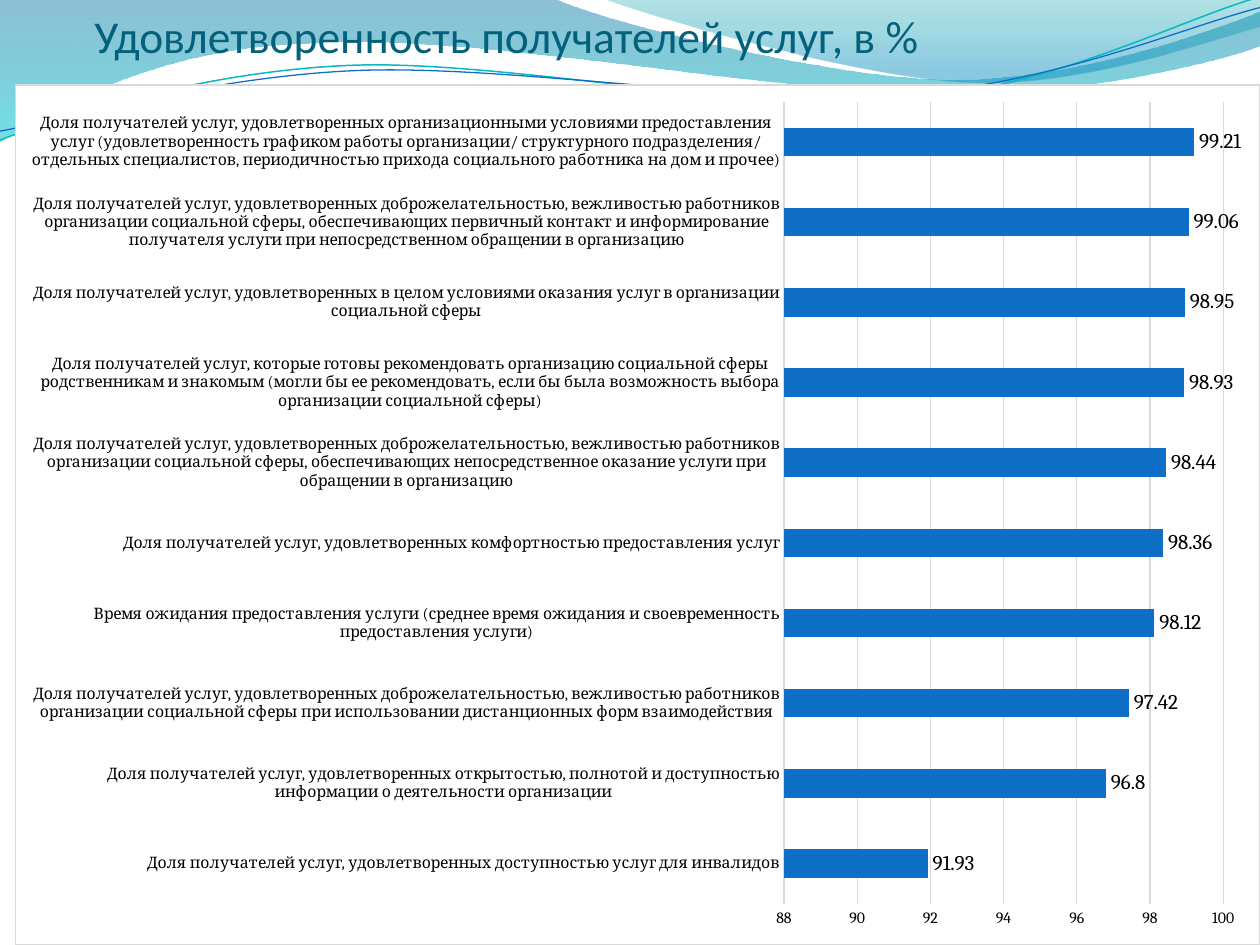
import pptx
import pptx.util
import pptx.chart.data
import pptx.dml.color
import pptx.enum.chart
import pptx.enum.text
import pptx.oxml
import pptx.oxml.ns

Pt = pptx.util.Pt
qn = pptx.oxml.ns.qn
NS = pptx.oxml.ns.nsdecls("a", "c")

# Content
TITLE = "Удовлетворенность получателей услуг, в %"
SHARE = "Доля получателей услуг, "
KIND = SHARE + "удовлетворенных доброжелательностью, вежливостью работников организации социальной сферы"
RATINGS = [  # bottom bar first
    (SHARE + "удовлетворенных доступностью услуг для инвалидов", 91.93),
    (SHARE + "удовлетворенных открытостью, полнотой и доступностью "
     "информации о деятельности организации", 96.8),
    (KIND + " при использовании дистанционных форм взаимодействия", 97.42),
    ("Время ожидания предоставления услуги (среднее время ожидания и "
     "своевременность предоставления услуги)", 98.12),
    (SHARE + "удовлетворенных комфортностью предоставления услуг", 98.36),
    (KIND + ", обеспечивающих непосредственное оказание услуги при "
     "обращении в организацию", 98.44),
    (SHARE + "которые готовы рекомендовать организацию социальной сферы "
     "родственникам и знакомым (могли бы ее рекомендовать, если бы была "
     "возможность выбора организации социальной сферы)", 98.93),
    (SHARE + "удовлетворенных в целом условиями оказания услуг в "
     "организации социальной сферы", 98.95),
    (KIND + ", обеспечивающих первичный контакт и информирование "
     "получателя услуги при непосредственном обращении в организацию", 99.06),
    (SHARE + "удовлетворенных организационными условиями предоставления "
     "услуг (удовлетворенность графиком работы организации/ структурного "
     "подразделения/ отдельных специалистов, периодичностью прихода "
     "социального работника на дом и прочее)", 99.21),
]
COLORS = {"title": "04617B", "bar": "0F6FC6", "grid": "D9D9D9", "text": "000000",
          "paper": "FFFFFF", "teal": "0AB8BF"}

# Header waves: a pair is a line to a point, a triple of pairs is a Bezier curve
BANDS = [  # path, gradient stops (position, colour, opacity %)
    ([(0, 0), (317, -0.7),
      ((343, 12.2), (478, 45.4), (546, 45.4)), ((614, 45.4), (690, 18.7), (720, 6.5)),
      (720.7, 26),
      ((708, 31.7), (626, 54.7), (537, 54)), ((448, 54), (275, 20.2), (185, 24.5)),
      ((93, 26), (33, 60), (-0.7, 81.4))],
     [(0, "0074A1", 45), (1, "00C6CF", 55)]),
    ([(345, -0.7),
      ((366, 8), (491, 44.6), (554, 46.8)), ((616, 49.7), (692, 23), (720, 15)),
      (720, 0)],
     [(0, "00A1A9", 30), (0.8, "008BBF", 45)]),
]
STROKES = [  # path, colour, width
    ([(0, 80), ((34.6, 67), (114, 41), (199.4, 37.4)),
      ((284.4, 33.8), (427, 64), (513.4, 57.6)),
      ((599.8, 51.1), (675.4, 10.8), (718.6, -1.4))], "teal", 0.85),
    ([(0, 74.9), ((33.8, 69.1), (118, 43.9), (203.8, 40.3)),
      ((290.2, 36.7), (429.8, 60.5), (516.2, 54)),
      ((601.9, 48.2), (677.5, 15.1), (720, 4.3))], "bar", 0.75),
]
# Left, top, width, height in points on the slide
CHART_BOX = (8.6, 48.2, 711.4, 491.8)
PLOT_BOX = (448.1, 57.9, 251.3, 458.9)


def rgb(value):
    return pptx.dml.color.RGBColor.from_string(COLORS.get(value, value))


def add_wave(slide, path, close):
    start, *parts = path
    points = []
    for part in parts:
        points += [part] if len(part) == 2 else part
    builder = slide.shapes.build_freeform(Pt(start[0]), Pt(start[1]))
    builder.add_line_segments([(Pt(x), Pt(y)) for x, y in points], close=close)
    s = builder.convert_to_shape()
    s.shadow.inherit = False
    # Join each triple of segments into one Bezier curve
    segments = iter(list(s.element.iter(qn("a:lnTo"))))
    for part in parts:
        first = next(segments)
        if len(part) == 3:
            curve = pptx.oxml.parse_xml(f"<a:cubicBezTo {NS}/>")
            first.addprevious(curve)
            for segment in (first, next(segments), next(segments)):
                curve.append(segment[0])
                segment.getparent().remove(segment)
    return s


def add_waves(slide):
    for path, stops in BANDS:
        s = add_wave(slide, path, True)
        s.line.fill.background()
        s.fill.gradient()
        s.fill.gradient_angle = 270
        for stop, (position, color, opacity) in zip(s.fill.gradient_stops, stops):
            stop.position = position
            stop.color.rgb = rgb(color)
        for node, stop in zip(s.element.iter(qn("a:srgbClr")), stops):
            node.append(pptx.oxml.parse_xml(f'<a:alpha {NS} val="{stop[2] * 1000}"/>'))
    for path, color, width in STROKES:
        s = add_wave(slide, path, False)
        s.fill.background()
        s.line.color.rgb = rgb(color)
        s.line.width = Pt(width)


def add_title(slide):
    tf = slide.shapes.add_textbox(Pt(54), Pt(0), Pt(648), Pt(36)).text_frame
    tf.word_wrap = True
    tf.vertical_anchor = pptx.enum.text.MSO_ANCHOR.BOTTOM
    tf.margin_left = tf.margin_right = tf.margin_bottom = 0
    r = tf.paragraphs[0].add_run()
    r.text = TITLE
    r.font.name, r.font.size = "Calibri", Pt(26)
    r.font.color.rgb = rgb("title")


def style_line(line):
    line.color.rgb = rgb("grid")
    line.width = Pt(0.75)


def add_ratings_chart(slide):
    data = pptx.chart.data.CategoryChartData()
    data.categories = [name for name, _ in RATINGS]
    data.add_series("Series 1", [value for _, value in RATINGS])
    xl = pptx.enum.chart
    chart = slide.shapes.add_chart(xl.XL_CHART_TYPE.BAR_CLUSTERED,
                                   *map(Pt, CHART_BOX), data).chart
    chart.has_legend = chart.has_title = False
    chart.font.name, chart.font.size = "Cambria", Pt(9)
    chart.font.color.rgb = rgb("text")

    # Bars and value labels
    plot = chart.plots[0]
    plot.gap_width = 182
    plot.vary_by_categories = False
    fill = plot.series[0].format.fill
    fill.solid()
    fill.fore_color.rgb = rgb("bar")
    plot.has_data_labels = True
    labels = plot.data_labels
    labels.show_value = True
    labels.position = xl.XL_LABEL_POSITION.OUTSIDE_END
    labels.font.name, labels.font.size = "Cambria", Pt(12)
    labels.font.color.rgb = rgb("text")

    # Axes
    for axis in (chart.category_axis, chart.value_axis):
        axis.major_tick_mark = axis.minor_tick_mark = xl.XL_TICK_MARK.NONE
    style_line(chart.category_axis.format.line)
    axis = chart.value_axis
    axis.minimum_scale, axis.maximum_scale, axis.major_unit = 88, 100, 2
    axis.format.line.fill.background()
    axis.has_major_gridlines = True
    style_line(axis.major_gridlines.format.line)

    # Plot position, background and border
    area = chart.element.find(".//" + qn("c:plotArea"))
    for old in area.findall(qn("c:layout")):
        area.remove(old)
    left, top, width, height = CHART_BOX
    x, y, w, h = PLOT_BOX
    shares = {"x": (x - left) / width, "y": (y - top) / height, "w": w / width, "h": h / height}
    modes = "".join(f'<c:{k}Mode val="edge"/>' for k in "xy")
    sizes = "".join(f'<c:{k} val="{v}"/>' for k, v in shares.items())
    area.insert(0, pptx.oxml.parse_xml(
        f'<c:layout {NS}><c:manualLayout><c:layoutTarget val="inner"/>'
        f'{modes}{sizes}</c:manualLayout></c:layout>'))
    solid = '<a:solidFill><a:srgbClr val="{}"/></a:solidFill>'
    chart.element.find(qn("c:chart")).addnext(pptx.oxml.parse_xml(
        f'<c:spPr {NS}>{solid.format(COLORS["paper"])}'
        f'<a:ln w="{Pt(0.75)}">{solid.format(COLORS["grid"])}</a:ln></c:spPr>'))


def main():
    prs = pptx.Presentation()
    prs.slide_width, prs.slide_height = Pt(720), Pt(540)
    slide = prs.slides.add_slide(prs.slide_layouts[6])
    add_waves(slide)
    add_title(slide)
    add_ratings_chart(slide)
    prs.save("out.pptx")


if __name__ == "__main__":
    main()
